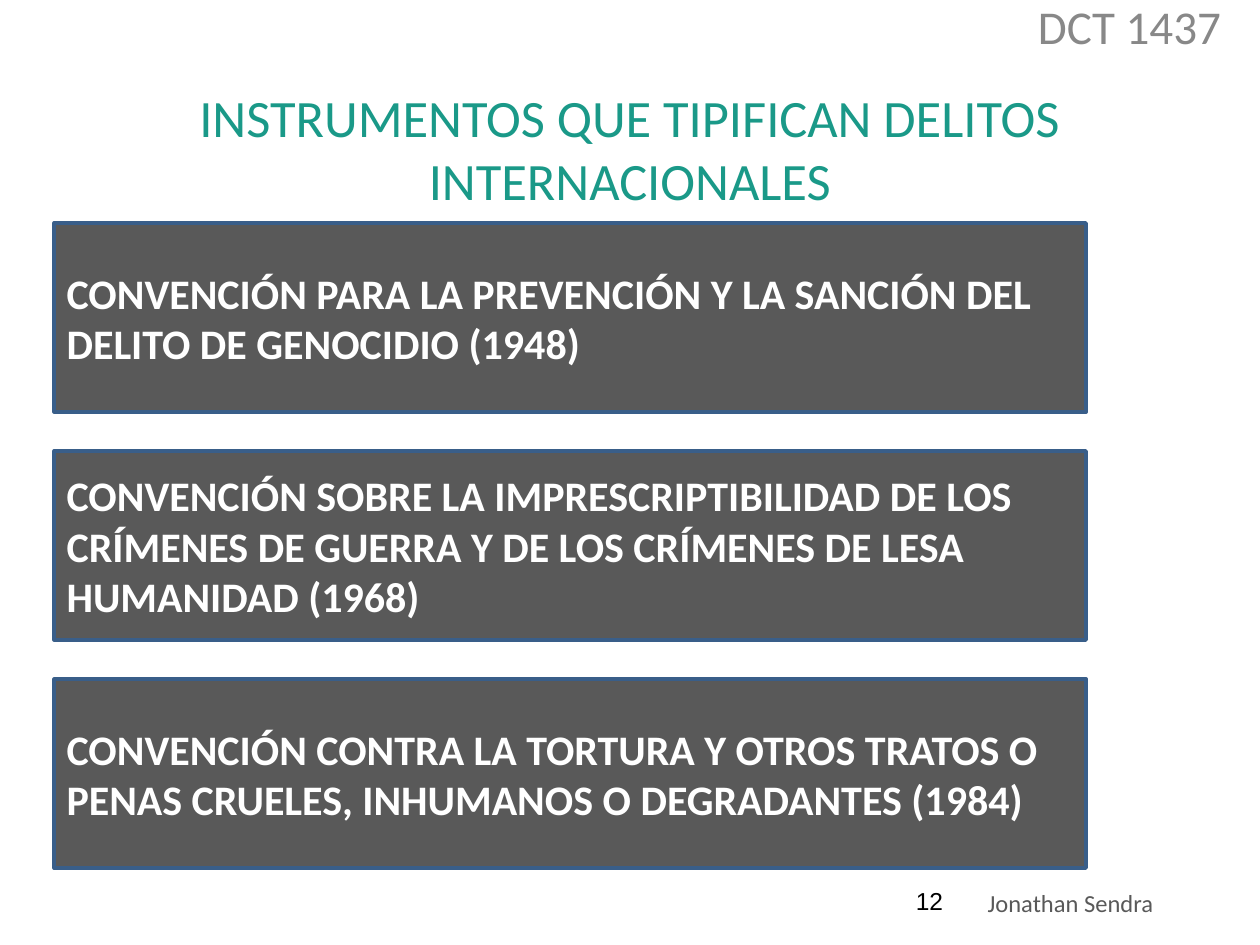
from pptx import Presentation
from pptx.dml.color import RGBColor
from pptx.enum import shapes, text
from pptx.util import Inches, Pt

TEAL = RGBColor(0x1A, 0x99, 0x88)
DARK = RGBColor(0x59, 0x59, 0x59)
BORDER = RGBColor(0x39, 0x5E, 0x89)
GRAY = RGBColor(0x88, 0x88, 0x88)
WHITE = RGBColor(0xFF, 0xFF, 0xFF)
BLACK = RGBColor(0, 0, 0)

MIDDLE = text.MSO_ANCHOR.MIDDLE
TOP = text.MSO_ANCHOR.TOP
LEFT = text.PP_ALIGN.LEFT
CENTER = text.PP_ALIGN.CENTER

CONVENTIONS = [
    "CONVENCIÓN PARA LA PREVENCIÓN Y LA SANCIÓN DEL DELITO DE GENOCIDIO (1948)",
    "CONVENCIÓN SOBRE LA IMPRESCRIPTIBILIDAD DE LOS CRÍMENES DE GUERRA "
    "Y DE LOS CRÍMENES DE LESA HUMANIDAD (1968)",
    "CONVENCIÓN CONTRA LA TORTURA Y OTROS TRATOS O PENAS CRUELES, "
    "INHUMANOS O DEGRADANTES (1984)",
]


def write(sp, words, size, color, font="Calibri", bold=False, align=LEFT, anchor=MIDDLE):
    """Fill a shape with one paragraph and return that paragraph."""
    tf = sp.text_frame
    tf.word_wrap = True
    tf.vertical_anchor = anchor
    p = tf.paragraphs[0]
    p.text = words
    p.alignment = align
    p.font.name = font
    p.font.size = Pt(size)
    p.font.bold = bold
    p.font.color.rgb = color
    return p


def add_text(s, x, y, w, h, words, size, color, **style):
    sp = s.shapes.add_textbox(Inches(x), Inches(y), Inches(w), Inches(h))
    write(sp, words, size, color, **style)
    return sp


def add_header(s, x, y, w, h):
    # Title, with the course code in the corner above it
    add_text(s, x, y, w, h, "INSTRUMENTOS QUE TIPIFICAN DELITOS INTERNACIONALES",
             30, TEAL, align=CENTER)
    code = add_text(s, x + w - 1.79, y - 0.53, 2.51, 0.57, "DCT 1437", 26.9, GRAY,
                    align=CENTER, anchor=TOP)
    p = code.text_frame.paragraphs[0]
    p.line_spacing = 0.8
    p.space_before = Pt(5.4)


def add_conventions(s, x, y, w, h, gap=0.31):
    # Equal boxes stacked down the region
    box_h = (h - gap * (len(CONVENTIONS) - 1)) / len(CONVENTIONS)
    for i, words in enumerate(CONVENTIONS):
        sp = s.shapes.add_shape(shapes.MSO_SHAPE.RECTANGLE, Inches(x),
                                Inches(y + i * (box_h + gap)), Inches(w), Inches(box_h))
        sp.shadow.inherit = False
        sp.fill.solid()
        sp.fill.fore_color.rgb = DARK
        sp.line.color.rgb = BORDER
        sp.line.width = Pt(2)
        write(sp, words, 24, WHITE, bold=True)


def add_footer(s, x, y, w, h):
    # Page number, then author
    add_text(s, x, y, 0.57, h, "12", 14, BLACK, font="Arial")
    author = add_text(s, x + 0.57, y, w - 0.57, h, "Jonathan Sendra", 14, DARK, anchor=TOP)
    author.text_frame.margin_top = Inches(0.1)


def main():
    prs = Presentation()
    prs.slide_width, prs.slide_height = Inches(10), Inches(7.5)
    s = prs.slides.add_slide(prs.slide_layouts[6])
    add_header(s, 0.5, 0.55, 9, 1.25)
    add_conventions(s, 0.43, 1.77, 8.19, 5.12)
    add_footer(s, 7.17, 6.95, 2.83, 0.4)
    prs.save("out.pptx")


if __name__ == "__main__":
    main()
